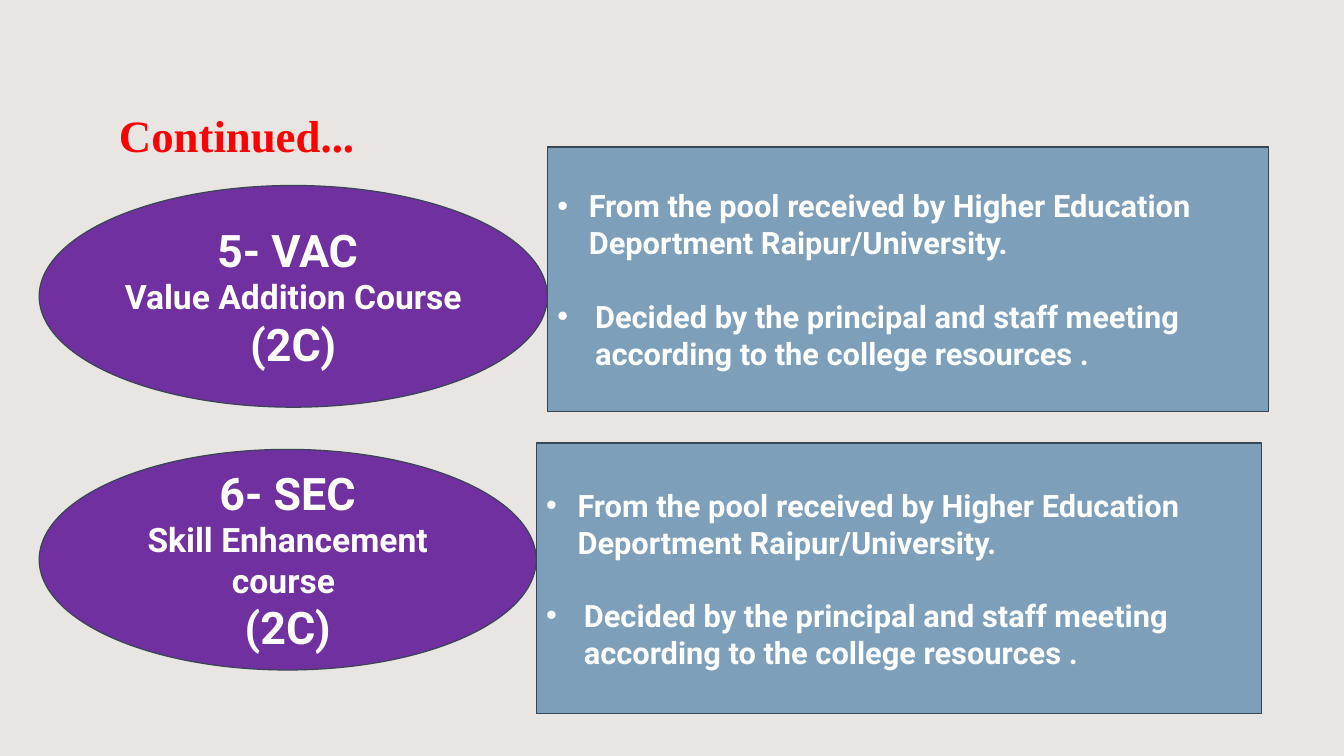
from pptx import Presentation
from pptx import util as u
from pptx.dml.color import RGBColor
from pptx.enum import shapes, text
from pptx.oxml.ns import qn
from lxml import etree

Pt = u.Pt
SHAPE = shapes.MSO_SHAPE
POOL = "From the pool received by Higher Education Deportment Raipur/University."
STAFF = "Decided by the principal and staff meeting according to the college resources ."


def color(code):
    return RGBColor.from_string(code)


def style(item, size, code, name="Roboto"):
    for run in item.runs:
        run.font.size = Pt(size)
        run.font.name = name
        run.font.bold = True
        run.font.color.rgb = color(code)


def add_title(slide, words):
    title = slide.shapes.title
    title.left, title.top, title.width, title.height = map(Pt, (77.76, 31, 804, 87.8))
    frame = title.text_frame
    frame.text = words
    frame.vertical_anchor = text.MSO_ANCHOR.BOTTOM
    frame.paragraphs[0].alignment = text.PP_ALIGN.LEFT
    style(frame.paragraphs[0], 32, "FF0000", "Times New Roman")


def add_panel(slide, kind, box, fill, lines):
    """Add an outlined shape and return its paragraphs."""
    panel = slide.shapes.add_shape(kind, *map(Pt, box))
    panel.shadow.inherit = False
    panel.fill.solid()
    panel.fill.fore_color.rgb = color(fill)
    panel.line.color.rgb = color("374652")
    panel.line.width = Pt(0.85)
    frame = panel.text_frame
    frame.word_wrap = True
    frame.vertical_anchor = text.MSO_ANCHOR.MIDDLE
    frame.text = "\n".join(lines)
    return frame.paragraphs


def add_course(slide, box, lines):
    items = add_panel(slide, SHAPE.OVAL, box, "7030A0", lines)
    for item, size in zip(items, (32, 24, 32)):
        item.alignment = text.PP_ALIGN.CENTER
        style(item, size, "FFFFFF")


def add_bullet(item, indent):
    props = item._p.get_or_add_pPr()
    props.set("marL", str(Pt(indent)))
    props.set("indent", str(-Pt(indent)))
    font = etree.SubElement(props, qn("a:buFont"))
    font.set("typeface", "Arial")
    mark = etree.SubElement(props, qn("a:buChar"))
    mark.set("char", "•")


def add_notes(slide, box):
    items = add_panel(slide, SHAPE.RECTANGLE, box, "7E9FBA", (POOL, STAFF))
    items[1].space_before = Pt(26)
    for item, indent in zip(items, (22.5, 27)):
        item.alignment = text.PP_ALIGN.LEFT
        add_bullet(item, indent)
        style(item, 22, "FFFFFF")
    return items


def main():
    deck = Presentation()
    deck.slide_width, deck.slide_height = Pt(960), Pt(540)
    slide = deck.slides.add_slide(deck.slide_layouts[5])
    slide.background.fill.solid()
    slide.background.fill.fore_color.rgb = color("E8E5E2")

    add_title(slide, "Continued...")
    add_course(slide, (28, 132.5, 363, 158.4), ("5- VAC ", "Value Addition Course ", "(2C)"))
    add_notes(slide, (391, 105, 515, 188.8))
    add_course(slide, (28, 321, 355, 157.6), ("6- SEC", "Skill Enhancement course ", "(2C)"))
    add_notes(slide, (383, 316.5, 518.4, 193.5))
    deck.save("out.pptx")


if __name__ == "__main__":
    main()
